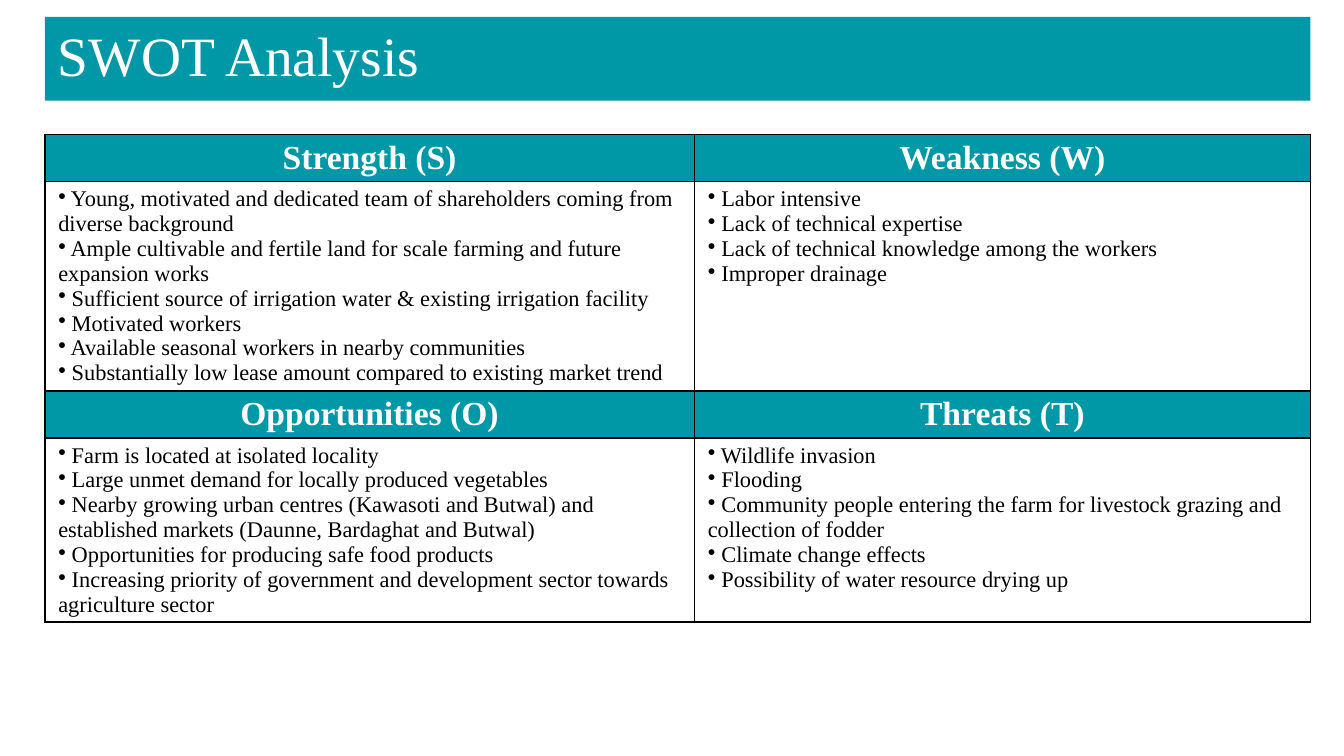
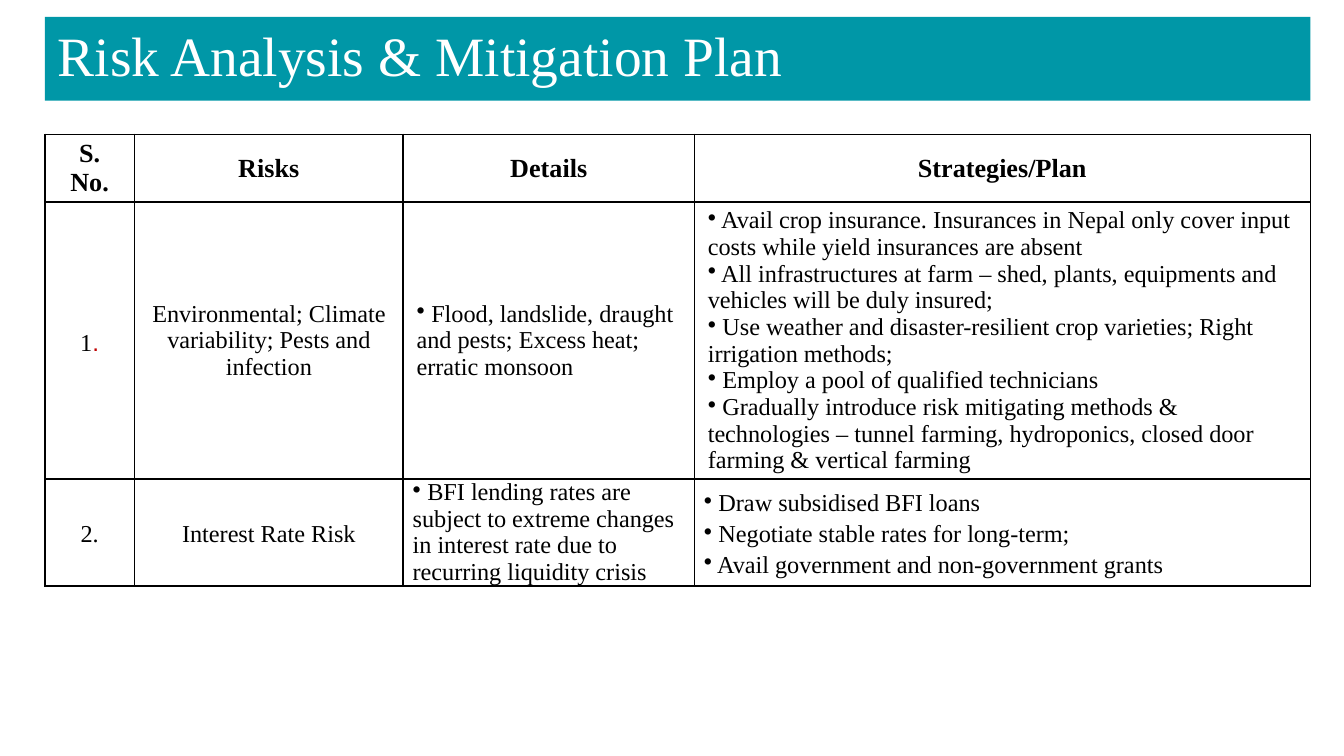
from dataclasses import dataclass

from lxml import etree
from pptx import Presentation
from pptx.dml.color import RGBColor
from pptx.enum import shapes, text
from pptx.oxml import ns
from pptx.util import Pt

TEAL, WHITE, BLACK, RED = "0097A7", "FFFFFF", "000000", "C00000"
SERIF, SANS = "Times New Roman", "Arial"
LEFT, WIDTH = 24, 678
TITLE_TOP, TITLE_HEIGHT = 9, 45
TABLE_TOP, ROW_HEIGHT = 72, 22.5
CENTER, START = text.PP_ALIGN.CENTER, text.PP_ALIGN.LEFT
TOP, MIDDLE, BOTTOM = text.MSO_ANCHOR.TOP, text.MSO_ANCHOR.MIDDLE, text.MSO_ANCHOR.BOTTOM


@dataclass(frozen=True)
class CellStyle:
    """Look of a kind of table cell."""
    size: float
    color: str = BLACK
    bold: bool = False
    fill: str | None = None
    anchor: text.MSO_ANCHOR = MIDDLE
    indent: float = 0
    spacing: float | None = None
    margins: tuple[float, float] = (7.2, 2.7)


@dataclass(frozen=True)
class Entry:
    """Paragraphs of one cell with their style."""
    style: CellStyle
    lines: tuple[str, ...]


TIGHT = (5.1, 0)
BAND = CellStyle(18, WHITE, True, TEAL)
LOW_BAND = CellStyle(18, WHITE, True, TEAL, BOTTOM)
POINTS = CellStyle(12, anchor=TOP, indent=6)
HEADING = CellStyle(14, bold=True)
NUMBER = CellStyle(13, spacing=1.15)
RISK = CellStyle(13)
RISK_POINTS = CellStyle(13, indent=6.5)
TIGHT_RISK = CellStyle(13, spacing=1.15, margins=TIGHT)
TIGHT_POINTS = CellStyle(13, indent=6.5, margins=TIGHT)
TIGHT_PLAN = CellStyle(13, indent=6.5, spacing=1.15, margins=TIGHT)

SWOT = [
    [Entry(BAND, ("Strength (S)",)), Entry(BAND, ("Weakness (W)",))],
    [
        Entry(POINTS, (
            "Young, motivated and dedicated team of shareholders coming from diverse background",
            "Ample cultivable and fertile land for scale farming and future expansion works",
            "Sufficient source of irrigation water & existing irrigation facility",
            "Motivated workers",
            "Available seasonal workers in nearby communities",
            "Substantially low lease amount compared to existing market trend",
        )),
        Entry(POINTS, (
            "Labor intensive",
            "Lack of technical expertise",
            "Lack of technical knowledge among the workers",
            "Improper drainage",
        )),
    ],
    [Entry(LOW_BAND, ("Opportunities (O)",)), Entry(LOW_BAND, ("Threats (T)",))],
    [
        Entry(POINTS, (
            "Farm is located at isolated locality",
            "Large unmet demand for locally produced vegetables",
            "Nearby growing urban centres (Kawasoti and Butwal) and established markets "
            "(Daunne, Bardaghat and Butwal)",
            "Opportunities for producing safe food products",
            "Increasing priority of government and development sector towards agriculture sector",
        )),
        Entry(POINTS, (
            "Wildlife invasion",
            "Flooding",
            "Community people entering the farm for livestock grazing and collection of fodder",
            "Climate change effects",
            "Possibility of water resource drying up",
        )),
    ],
]

RISKS = [
    [Entry(HEADING, (name,)) for name in ("S. No.", "Risks", "Details", "Strategies/Plan")],
    [
        Entry(NUMBER, ("1",)),
        Entry(RISK, ("Environmental; Climate variability; Pests and infection",)),
        Entry(RISK_POINTS, (
            "Flood, landslide, draught and pests; Excess heat; erratic monsoon",
        )),
        Entry(RISK_POINTS, (
            "Avail crop insurance. Insurances in Nepal only cover input costs while yield "
            "insurances are absent",
            "All infrastructures at farm – shed, plants, equipments and vehicles will be duly "
            "insured;",
            "Use weather and disaster-resilient crop varieties; Right irrigation methods;",
            "Employ a pool of qualified technicians",
            "Gradually introduce risk mitigating methods & technologies – tunnel farming, "
            "hydroponics, closed door farming & vertical farming",
        )),
    ],
    [
        Entry(TIGHT_RISK, ("2.",)),
        Entry(TIGHT_RISK, ("Interest Rate Risk",)),
        Entry(TIGHT_POINTS, (
            "BFI lending rates are subject to extreme changes in interest rate due to "
            "recurring liquidity crisis",
        )),
        Entry(TIGHT_PLAN, (
            "Draw subsidised BFI loans",
            "Negotiate stable rates for long-term;",
            "Avail government and non-government grants",
        )),
    ],
]


def rgb(color: str) -> RGBColor:
    """Turn a hex string into a colour."""
    return RGBColor.from_string(color)


def format_span(span, size: float, color: str, bold: bool = False, name: str = SERIF) -> None:
    """Set the font of one run."""
    font = span.font
    font.name, font.size, font.bold = name, Pt(size), bold
    font.color.rgb = rgb(color)


def add_solid(parent, tag: str, color: str):
    """Append an element holding a colour and return it."""
    element = etree.SubElement(parent, ns.qn(tag))
    etree.SubElement(element, ns.qn("a:srgbClr"), val=color)
    return element


def add_borders(cell) -> None:
    """Draw a thin black line on each side of a cell."""
    properties = cell._tc.get_or_add_tcPr()
    for side in ("a:lnL", "a:lnR", "a:lnT", "a:lnB"):
        line = etree.SubElement(properties, ns.qn(side), w=str(Pt(1)))
        add_solid(line, "a:solidFill", BLACK)


def add_bullet(para, indent: float) -> None:
    """Give a paragraph a black bullet with a hanging indent."""
    properties = para._p.get_or_add_pPr()
    properties.set("marL", "0")
    properties.set("indent", str(-Pt(indent)))
    add_solid(properties, "a:buClr", BLACK)
    etree.SubElement(properties, ns.qn("a:buChar"), char="•")


def fill_cell(cell, entry: Entry) -> None:
    """Write an entry into a cell and style it."""
    style = entry.style
    add_borders(cell)
    if style.fill:
        cell.fill.solid()
        cell.fill.fore_color.rgb = rgb(style.fill)
    else:
        cell.fill.background()
    cell.vertical_anchor = style.anchor
    side, edge = style.margins
    cell.margin_left = cell.margin_right = Pt(side)
    cell.margin_top = cell.margin_bottom = Pt(edge)
    lead = " " if style.indent else ""
    cell.text_frame.text = "\n".join(lead + line for line in entry.lines)
    for para in cell.text_frame.paragraphs:
        para.alignment = START if style.indent else CENTER
        if style.spacing:
            para.line_spacing = style.spacing
        if style.indent:
            add_bullet(para, style.indent)
        for span in para.runs:
            format_span(span, style.size, style.color, style.bold)


def add_grid(page, widths: list[float], height: float, rows: list[list[Entry]]):
    """Add a bordered table and return it."""
    frame = page.shapes.add_table(
        len(rows), len(widths), Pt(LEFT), Pt(TABLE_TOP), Pt(WIDTH), Pt(height))
    table = frame.table
    table.first_row = table.horz_banding = False
    for column, width in zip(table.columns, widths):
        column.width = Pt(width)
    for row, entries in zip(table.rows, rows):
        row.height = Pt(ROW_HEIGHT)
        for cell, entry in zip(row.cells, entries):
            fill_cell(cell, entry)
    frame.height = Pt(height)
    return table


def add_page(deck, title: str):
    """Add a blank page with the teal title band."""
    page = deck.slides.add_slide(deck.slide_layouts[6])
    box = page.shapes.add_shape(
        shapes.MSO_SHAPE.RECTANGLE, Pt(LEFT), Pt(TITLE_TOP), Pt(WIDTH), Pt(TITLE_HEIGHT))
    box.shadow.inherit = False
    box.fill.solid()
    box.fill.fore_color.rgb = rgb(TEAL)
    box.line.fill.background()
    frame = box.text_frame
    frame.word_wrap = True
    frame.vertical_anchor = BOTTOM
    frame.margin_left = frame.margin_right = frame.margin_bottom = Pt(7.2)
    frame.margin_top = Pt(3.6)
    frame.text = title
    para = frame.paragraphs[0]
    para.alignment = START
    format_span(para.runs[0], 29.7, WHITE)
    return page


def main() -> None:
    """Build and save the deck."""
    deck = Presentation()
    deck.slide_width, deck.slide_height = Pt(720), Pt(405)
    add_grid(add_page(deck, "SWOT Analysis"), [348, 330], 338.4, SWOT)
    page = add_page(deck, "Risk Analysis & Mitigation Plan")
    table = add_grid(page, [48, 144, 156, 330], 309.6, RISKS)
    dot = table.cell(1, 0).text_frame.paragraphs[0].add_run()
    dot.text = "."
    format_span(dot, 13, RED, name=SANS)
    deck.save("out.pptx")


if __name__ == "__main__":
    main()
